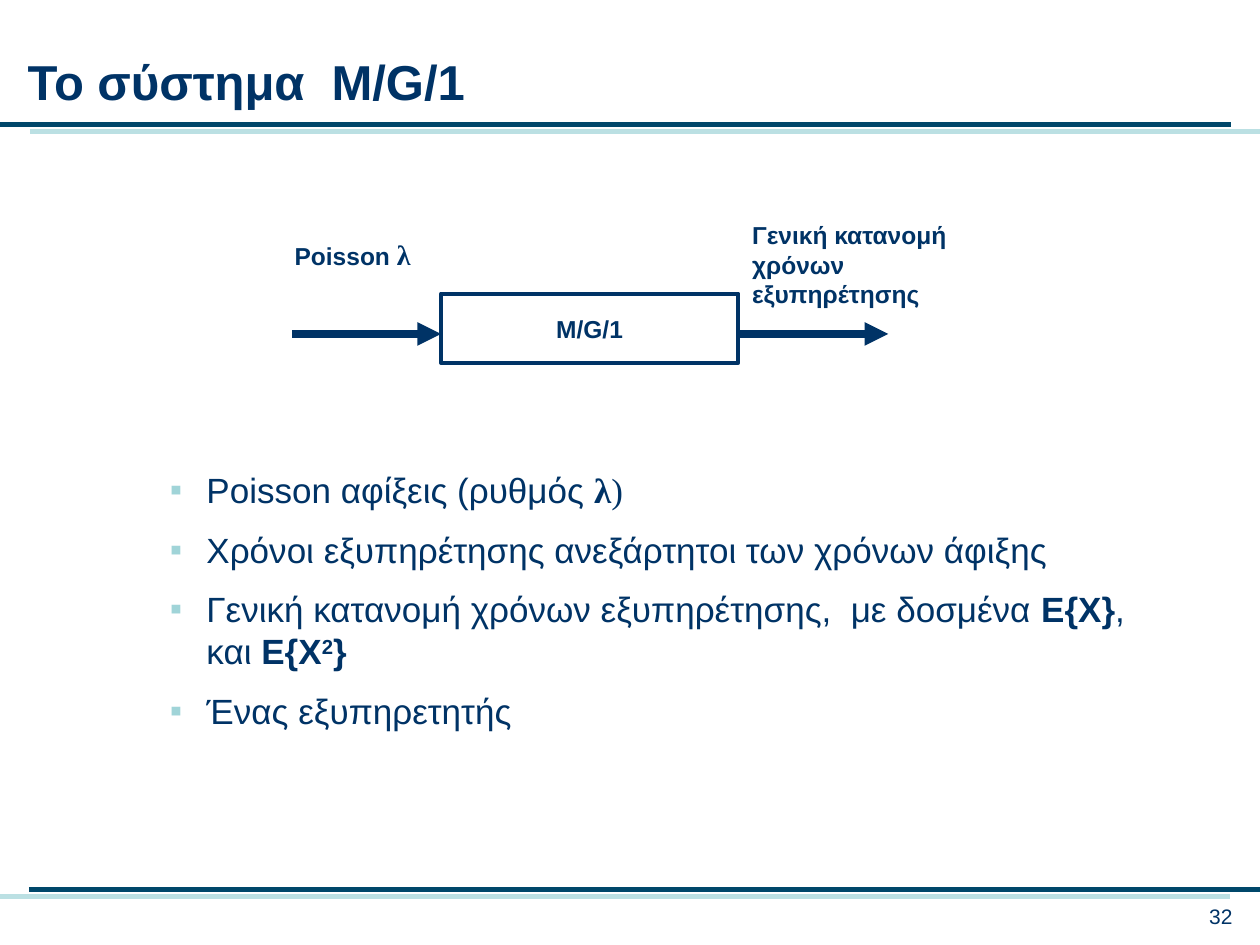
from pptx import Presentation
from pptx.dml.color import RGBColor
from pptx.enum import shapes, text
from pptx.oxml import parse_xml
from pptx.oxml.ns import nsdecls
from pptx.util import Inches, Pt

NAVY = RGBColor(0x00, 0x33, 0x66)
RULE = RGBColor(0x00, 0x47, 0x6A)
PALE = RGBColor(0xBB, 0xE0, 0xE3)
BULLET = RGBColor(0xA0, 0xD4, 0xD8)
SERIF = {"font": "Times New Roman"}
BOLD = {"bold": True}

# Content: a paragraph is a list of (text, format) runs
TITLE = "Το σύστημα  M/G/1"
PAGE = "32"
QUEUE = "M/G/1"
ARRIVALS = [("Poisson ", BOLD), ("λ", {**SERIF, **BOLD, "size": 16})]
SERVICE = "Γενική κατανομή χρόνων εξυπηρέτησης"
ASSUMPTIONS = [
    [("Poisson αφίξεις (ρυθμός ", {}), ("λ", {**SERIF, **BOLD}), (")", SERIF)],
    [("Χρόνοι εξυπηρέτησης ανεξάρτητοι των χρόνων άφιξης", {})],
    [("Γενική κατανομή χρόνων εξυπηρέτησης,  με δοσμένα ", {}),
     ("E{X}", BOLD), (", και ", {}), ("E{X", BOLD),
     ("2", {**BOLD, "baseline": 30}), ("}", BOLD)],
    [("Ένας εξυπηρετητής", {})],
]

# Geometry in inches
RULES = [(0, 9.77, 0.99, 13), (0.23, 10, 7.06, 167)]  # left, right, y, shadow angle
BOX = (3.5, 2.33, 2.36, 0.55)
ARROW_Y, ARROW_LENGTH = 2.65, 1.18
ARROW_STARTS = [BOX[0] - ARROW_LENGTH, BOX[0] + BOX[2] + 0.01]


def append_xml(parent, body):
    parent.extend(list(parse_xml(f"<a:wrap {nsdecls('a')}>{body}</a:wrap>")))


def add_run(paragraph, words, size, bold=False, font="Arial", baseline=0):
    run = paragraph.add_run()
    run.text = words
    run.font.size, run.font.bold, run.font.name = Pt(size), bold, font
    run.font.color.rgb = NAVY
    if baseline:
        run._r.get_or_add_rPr().set("baseline", str(baseline * 1000))


def write(shape, paragraphs, size, bold=False, align=text.PP_ALIGN.LEFT,
          anchor=text.MSO_ANCHOR.TOP, wrap=True, spaced=True, bullet=None):
    frame = shape.text_frame
    frame.word_wrap, frame.vertical_anchor = wrap, anchor
    frame.auto_size = (text.MSO_AUTO_SIZE.SHAPE_TO_FIT_TEXT if spaced
                       else text.MSO_AUTO_SIZE.NONE)
    if isinstance(paragraphs, str):
        paragraphs = [[(paragraphs, {"bold": bold})]]
    for i, runs in enumerate(paragraphs):
        paragraph = frame.add_paragraph() if i else frame.paragraphs[0]
        paragraph.alignment = align
        props = paragraph._p.get_or_add_pPr()
        if spaced:
            append_xml(props, '<a:spcBef><a:spcPct val="50000"/></a:spcBef>')
        if bullet:
            props.set("marL", str(Inches(0.29)))
            props.set("indent", str(-Inches(0.29)))
            append_xml(props, f'<a:buClr><a:srgbClr val="{BULLET}"/></a:buClr>'
                              '<a:buFont typeface="Arial"/>'
                              f'<a:buChar char="{bullet}"/>')
        for words, style in runs:
            add_run(paragraph, words, **{"size": size, **style})


def add_text(slide, at, paragraphs, size, **style):
    write(slide.shapes.add_textbox(*map(Inches, at)), paragraphs, size, **style)


def add_line(slide, left, right, y, color, width, effect=""):
    line = slide.shapes.add_connector(
        shapes.MSO_CONNECTOR.STRAIGHT, *map(Inches, (left, y, right, y)))
    line.line.color.rgb, line.line.width = color, Pt(width)
    append_xml(line._element.spPr, f"<a:effectLst>{effect}</a:effectLst>")
    return line


prs = Presentation()
prs.slide_width, prs.slide_height = Inches(10), Inches(7.5)
slide = prs.slides.add_slide(prs.slide_layouts[5])

# Header and footer rules with their pale offset shadows
for left, right, y, angle in RULES:
    add_line(slide, left, right, y, RULE, 3,
             f'<a:outerShdw dist="{Pt(17.5)}" dir="{angle * 60000}" algn="ctr" '
             f'rotWithShape="0"><a:srgbClr val="{PALE}"/></a:outerShdw>')

# Title and page number
title = slide.shapes.title
title.left, title.top, title.width, title.height = map(Inches, (0.12, 0.36, 9.29, 0.57))
write(title, TITLE, 28, bold=True)
add_text(slide, (8.78, 7.12, 1.1, 0.3), PAGE, 12, align=text.PP_ALIGN.RIGHT)

# Queue diagram
queue = slide.shapes.add_shape(shapes.MSO_SHAPE.RECTANGLE, *map(Inches, BOX))
queue.shadow.inherit = False
queue.fill.background()
queue.line.color.rgb, queue.line.width = NAVY, Pt(2.25)
write(queue, QUEUE, 14, bold=True, align=text.PP_ALIGN.CENTER,
      anchor=text.MSO_ANCHOR.MIDDLE, wrap=False, spaced=False)
for start in ARROW_STARTS:
    arrow = add_line(slide, start, start + ARROW_LENGTH, ARROW_Y, NAVY, 4.5)
    append_xml(arrow.line._get_or_add_ln(), '<a:tailEnd type="triangle"/>')
add_text(slide, (2.24, 1.84, 1.57, 0.37), [ARRIVALS], 14)
add_text(slide, (5.87, 1.7, 1.89, 0.81), SERVICE, 14, bold=True)

# Assumptions
add_text(slide, (1.25, 3.67, 7.85, 2.29), ASSUMPTIONS, 20, bullet="▪")

prs.save("out.pptx")
